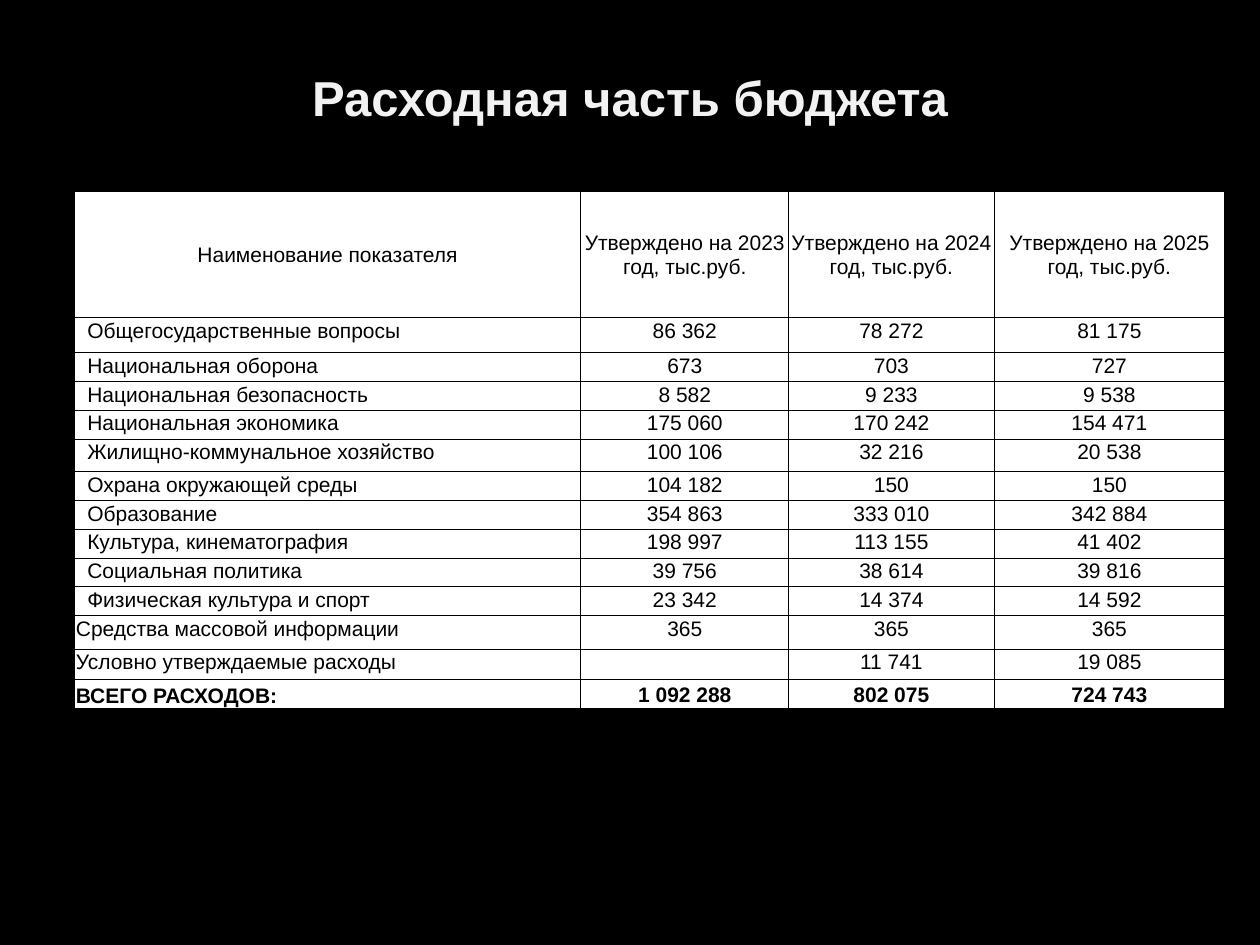
import lxml.etree
import pptx
import pptx.dml.color
import pptx.enum.text
import pptx.oxml.ns
import pptx.util

Cm = pptx.util.Cm
Pt = pptx.util.Pt
ALIGN = pptx.enum.text.PP_ALIGN
ANCHOR = pptx.enum.text.MSO_ANCHOR

BLACK, WHITE, PALE = "000000", "FFFFFF", "F2F2F2"
SIZE = 12
PAD, INSET = 0.03, 0.26
COLS = [10.21, 4.19, 4.14, 4.65]
LOW = 0.58
HEIGHTS = [2.54, 0.71] + [LOW] * 3 + [0.66] + [LOW] * 5 + [0.68, 0.61, LOW]

HEAD = ["Наименование показателя"] + [
    f"Утверждено на {year} год, тыс.руб." for year in (2023, 2024, 2025)
]
ITEMS = [
    ["Общегосударственные вопросы", "86 362", "78 272", "81 175"],
    ["Национальная оборона", "673", "703", "727"],
    ["Национальная безопасность", "8 582", "9 233", "9 538"],
    ["Национальная экономика", "175 060", "170 242", "154 471"],
    ["Жилищно-коммунальное хозяйство", "100 106", "32 216", "20 538"],
    ["Охрана окружающей среды", "104 182", "150", "150"],
    ["Образование", "354 863", "333 010", "342 884"],
    ["Культура, кинематография", "198 997", "113 155", "41 402"],
    ["Социальная политика", "39 756", "38 614", "39 816"],
    ["Физическая культура и спорт", "23 342", "14 374", "14 592"],
]
OTHER = [
    ["Средства массовой информации", "365", "365", "365"],
    ["Условно утверждаемые расходы", "", "11 741", "19 085"],
]
TOTAL = ["ВСЕГО РАСХОДОВ:", "1 092 288", "802 075", "724 743"]


def paint(fill, color):
    fill.solid()
    fill.fore_color.rgb = pptx.dml.color.RGBColor.from_string(color)


def style(para, size, color, bold, align):
    para.alignment = align
    for run in para.runs:
        run.font.name = "Arial"
        run.font.size = Pt(size)
        run.font.bold = bold
        paint(run.font.fill, color)
    if not para.runs:
        # An empty cell would otherwise take the default 18 pt and stretch its row.
        para._p.get_or_add_endParaRPr().set("sz", str(size * 100))


def border(cell, color, width):
    qn = pptx.oxml.ns.qn
    props = cell._tc.get_or_add_tcPr()
    for side in ("lnL", "lnR", "lnT", "lnB"):
        line = lxml.etree.SubElement(props, qn(f"a:{side}"), w=str(Pt(width)))
        fill = lxml.etree.SubElement(line, qn("a:solidFill"))
        lxml.etree.SubElement(fill, qn("a:srgbClr"), val=color)


def fill_cell(cell, text, align, anchor, left=PAD, bold=False):
    cell.text_frame.text = text
    style(cell.text_frame.paragraphs[0], SIZE, BLACK, bold, align)
    cell.vertical_anchor = anchor
    cell.margin_left = Cm(left)
    cell.margin_right = cell.margin_top = Cm(PAD)
    cell.margin_bottom = 0
    border(cell, BLACK, 0.5)
    paint(cell.fill, WHITE)


def add_title(slide, text):
    title = slide.shapes.title
    title.left, title.top = Cm(1.27), Cm(0.74)
    title.width, title.height = Cm(22.86), Cm(2.44)
    frame = title.text_frame
    frame.text = text
    frame.vertical_anchor = ANCHOR.MIDDLE
    style(frame.paragraphs[0], 28, PALE, True, ALIGN.CENTER)


def add_budget(slide):
    data = [HEAD] + ITEMS + OTHER + [TOTAL]
    table = slide.shapes.add_table(
        len(data), len(COLS), Cm(1.5), Cm(3.86), Cm(sum(COLS)), Cm(sum(HEIGHTS))
    ).table
    table.first_row = table.horz_banding = False
    for col, width in zip(table.columns, COLS):
        col.width = Cm(width)
    for row, height, texts in zip(table.rows, HEIGHTS, data):
        row.height = Cm(height)
        total = texts is TOTAL
        anchor = ANCHOR.MIDDLE if texts is HEAD or total else ANCHOR.TOP
        name, *sums = row.cells
        fill_cell(
            name,
            texts[0],
            ALIGN.CENTER if texts is HEAD else ALIGN.LEFT,
            ANCHOR.BOTTOM if total else anchor,
            INSET if texts in ITEMS else PAD,
            total,
        )
        for cell, text in zip(sums, texts[1:]):
            fill_cell(cell, text, ALIGN.CENTER, anchor, bold=total)


def main():
    deck = pptx.Presentation()
    deck.slide_width, deck.slide_height = Cm(25.4), Cm(19.05)
    slide = deck.slides.add_slide(deck.slide_layouts[5])
    paint(slide.background.fill, BLACK)
    add_title(slide, "Расходная часть бюджета")
    add_budget(slide)
    deck.save("out.pptx")


if __name__ == "__main__":
    main()
